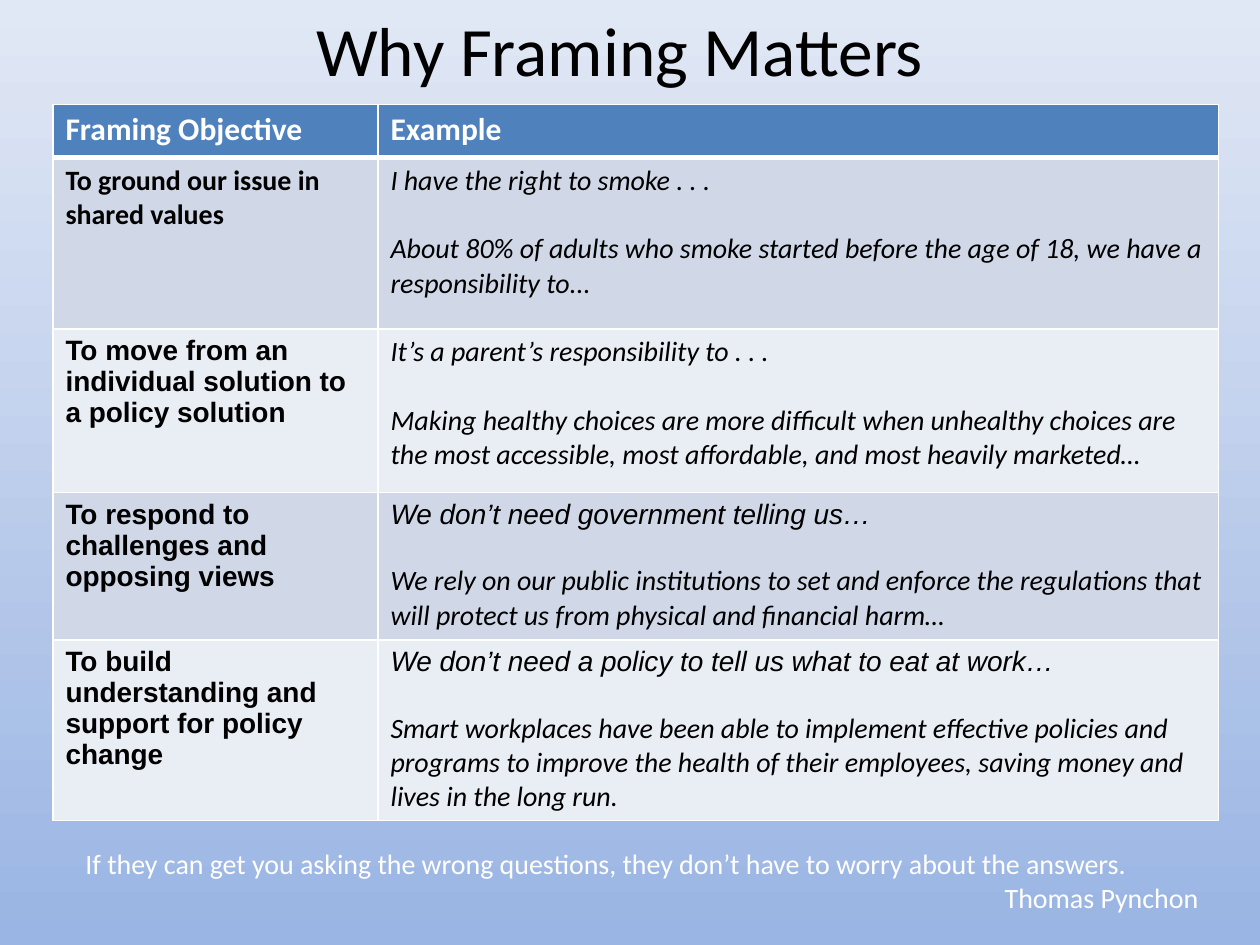
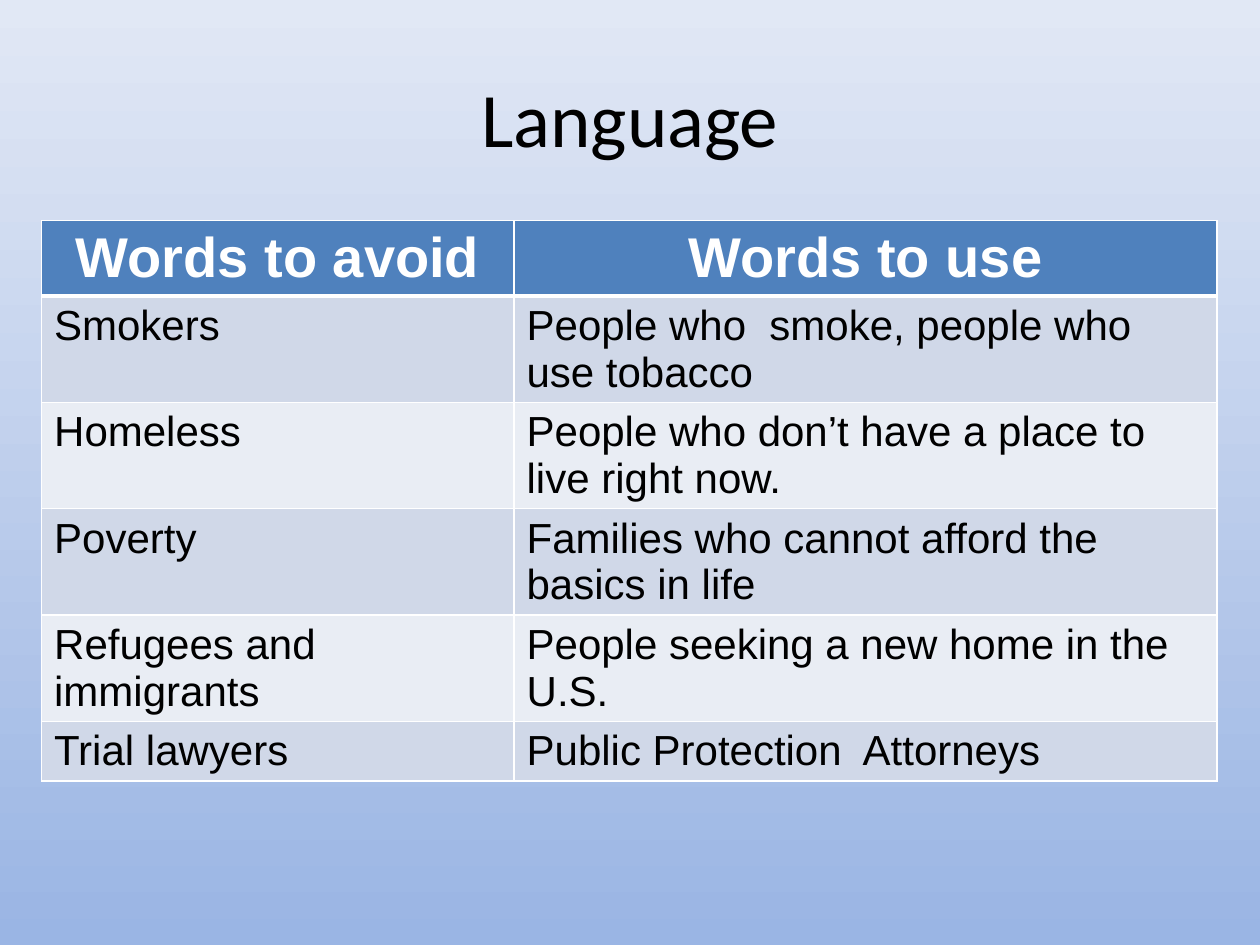
from dataclasses import dataclass
from lxml.etree import SubElement
from pptx import Presentation
from pptx.dml.color import RGBColor
from pptx.enum.text import MSO_ANCHOR as Anchor, MSO_AUTO_SIZE as AutoSize, PP_ALIGN as Align
from pptx.oxml.ns import qn
from pptx.util import Inches, Pt


@dataclass(frozen=True)
class Theme:
    sans: str = "Calibri"
    plain: str = "Arial"
    black: str = "000000"
    white: str = "FFFFFF"
    header: str = "4F81BD"
    bands: tuple = ("D0D8E8", "E9EDF4")
    backdrop: tuple = ((0, "9AB5E4"), (53, "BFCFEC"), (53, "C2D1ED"), (100, "E1E8F5"))
    title: float = 44
    small_title: float = 39.6
    big_header: float = 32
    big_cell: float = 24
    header_size: float = 18
    body: float = 16
    example_gap: float = 19.5
    thin: float = 1
    thick: float = 3


@dataclass(frozen=True)
class Style:
    size: float
    font: str
    color: str
    bold: bool = False
    italic: bool = False
    align: Align = Align.LEFT
    before: float = 0


class Builder:
    def __init__(self, theme):
        self.theme = theme
        self.deck = Presentation()
        self.deck.slide_width, self.deck.slide_height = Inches(10), Inches(7.5)
        self.page = None
        self.paint_backdrop()

    def paint_backdrop(self):
        """Give the master a vertical gradient that starts at the bottom edge."""
        master = self.deck.slide_master
        fill = master.background.fill
        fill.gradient()
        fill.gradient_angle = 90
        stops = next(master.element.iter(qn("a:gsLst")))
        for stop in list(stops):
            stops.remove(stop)
        for percent, color in self.theme.backdrop:
            stop = SubElement(stops, qn("a:gs"), pos=str(percent * 1000))
            SubElement(stop, qn("a:srgbClr"), val=color)

    def set_lines(self, frame, lines):
        """Fill a text frame with (text, style) pairs, one paragraph each."""
        for index, (text, style) in enumerate(lines):
            para = frame.paragraphs[0] if index == 0 else frame.add_paragraph()
            para.text = text
            para.alignment = style.align
            para.space_before = Pt(style.before if index else 0)
            font = para.font
            font.name, font.size = style.font, Pt(style.size)
            font.bold, font.italic = style.bold, style.italic
            font.color.rgb = RGBColor.from_string(style.color)

    def place(self, shape, area):
        shape.left, shape.top, shape.width, shape.height = map(Inches, area)

    def add_page(self, title, area, size):
        self.page = self.deck.slides.add_slide(self.deck.slide_layouts[5])
        box = self.page.shapes.title
        self.place(box, area)
        frame = box.text_frame
        frame.auto_size = AutoSize.NONE
        frame.vertical_anchor = Anchor.MIDDLE
        style = Style(size, self.theme.sans, self.theme.black, align=Align.CENTER)
        self.set_lines(frame, [(title, style)])

    def add_text(self, area, lines):
        box = self.page.shapes.add_textbox(*map(Inches, area))
        box.text_frame.word_wrap = True
        self.set_lines(box.text_frame, lines)

    def add_border(self, cell, row):
        """White rules all round, heavier between the header and the body."""
        theme = self.theme
        widths = {
            "lnL": theme.thin,
            "lnR": theme.thin,
            "lnT": theme.thick if row == 1 else theme.thin,
            "lnB": theme.thick if row == 0 else theme.thin,
        }
        properties = cell._tc.get_or_add_tcPr()
        for index, (side, width) in enumerate(widths.items()):
            line = SubElement(properties, qn(f"a:{side}"), w=str(Pt(width)))
            solid = SubElement(line, qn("a:solidFill"))
            SubElement(solid, qn("a:srgbClr"), val=theme.white)
            properties.insert(index, line)

    def add_table(self, left, top, widths, heights, rows):
        """Draw a table; each cell of rows is a list of (text, style) pairs."""
        area = (left, top, sum(widths), sum(heights))
        table = self.page.shapes.add_table(len(rows), len(widths), *map(Inches, area)).table
        table.horz_banding = False
        for column, width in zip(table.columns, widths):
            column.width = Inches(width)
        for row, (height, cells) in enumerate(zip(heights, rows)):
            table.rows[row].height = Inches(height)
            color = self.theme.bands[(row - 1) % 2] if row else self.theme.header
            for column, lines in enumerate(cells):
                cell = table.cell(row, column)
                cell.fill.solid()
                cell.fill.fore_color.rgb = RGBColor.from_string(color)
                self.add_border(cell, row)
                self.set_lines(cell.text_frame, lines)


def add_framing_page(builder):
    theme = builder.theme
    builder.add_page("Why Framing Matters", (0.42, 0, 9, 0.78), theme.small_title)
    header = Style(theme.header_size, theme.sans, theme.white, bold=True)

    def objective(font):
        return Style(theme.body, font, theme.black, bold=True)

    def example(font):
        return Style(theme.body, font, theme.black, italic=True, before=theme.example_gap)

    # objective, its font, opposing claim, its font, reframed answer
    framings = [
        ("To ground our issue in shared values", theme.sans,
         "I have the right to smoke . . .", theme.sans,
         "About 80% of adults who smoke started before the age of 18, we have a "
         "responsibility to..."),
        ("To move from an individual solution to a policy solution", theme.plain,
         "It’s a parent’s responsibility to . . .", theme.sans,
         "Making healthy choices are more difficult when unhealthy choices are the most "
         "accessible, most affordable, and most heavily marketed…"),
        ("To respond to challenges and opposing views", theme.plain,
         "We don’t need government telling us…", theme.plain,
         "We rely on our public institutions to set and enforce the regulations that will "
         "protect us from physical and financial harm…"),
        ("To build understanding and support for policy change", theme.plain,
         "We don’t need a policy to tell us what to eat at work…", theme.plain,
         "Smart workplaces have been able to implement effective policies and programs to "
         "improve the health of their employees, saving money and lives in the long run."),
    ]
    rows = [[[("Framing Objective", header)], [("Example", header)]]]
    for goal, goal_font, claim, claim_font, answer in framings:
        rows.append([
            [(goal, objective(goal_font))],
            [(claim, example(claim_font)), (answer, example(theme.sans))],
        ])
    builder.add_table(0.42, 0.83, (2.58, 6.67), (0.42, 1.36, 1.3, 1.17, 1.43), rows)

    quote = Style(theme.body, theme.sans, theme.white)
    author = Style(theme.body, theme.sans, theme.white, align=Align.RIGHT)
    builder.add_text((0.58, 6.67, 9.08, 0.64), [
        ("If they can get you asking the wrong questions, they don’t have to worry about "
         "the answers.", quote),
        ("Thomas Pynchon ", author),
    ])


def add_language_page(builder):
    theme = builder.theme
    builder.add_page("Language", (0.5, 0.3, 9, 1.25), theme.title)
    header = Style(theme.big_header, theme.plain, theme.white, bold=True, align=Align.CENTER)
    body = Style(theme.big_cell, theme.plain, theme.black)
    wordings = [
        ("Words to avoid", "Words to use"),
        ("Smokers", "People who  smoke, people who use tobacco"),
        ("Homeless", "People who don’t have a place to live right now."),
        ("Poverty", "Families who cannot afford the basics in life"),
        ("Refugees and immigrants", "People seeking a new home in the U.S."),
        ("Trial lawyers", "Public Protection  Attorneys"),
    ]
    rows = [[[(text, body if row else header)] for text in pair]
            for row, pair in enumerate(wordings)]
    heights = (0.6, *[0.84] * 4, 0.47)
    builder.add_table(0.33, 1.75, (3.75, 5.58), heights, rows)


def main():
    builder = Builder(Theme())
    add_framing_page(builder)
    add_language_page(builder)
    builder.deck.save("out.pptx")


if __name__ == "__main__":
    main()
